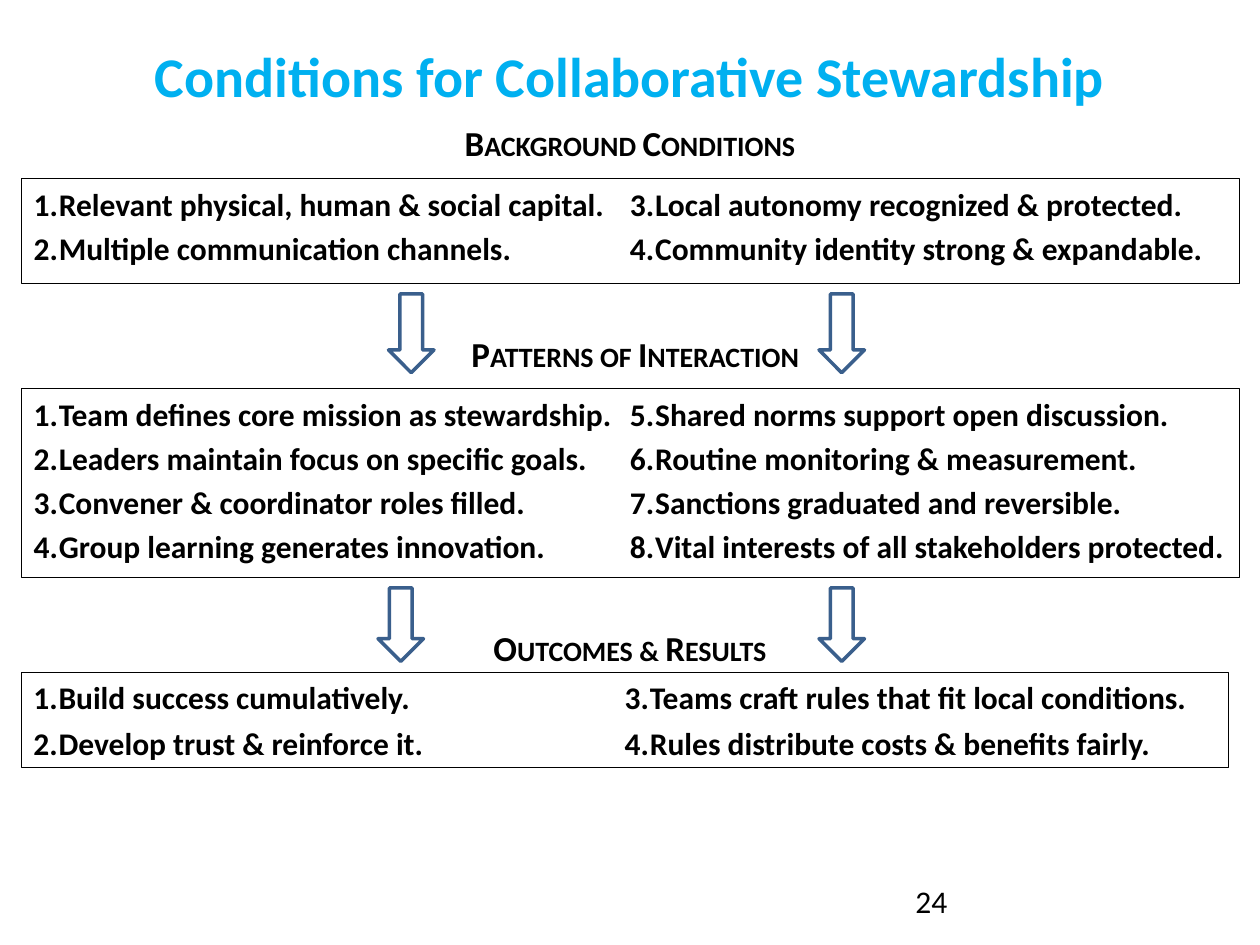
"""Build the slide on conditions for collaborative stewardship."""
import pptx
import pptx.util
import pptx.dml.color
import pptx.enum.shapes
import pptx.enum.text
import lxml.etree

Pt = pptx.util.Pt
Fit = pptx.enum.text.MSO_AUTO_SIZE
Anchor = pptx.enum.text.MSO_ANCHOR
Align = pptx.enum.text.PP_ALIGN
Shape = pptx.enum.shapes.MSO_SHAPE
A = "{http://schemas.openxmlformats.org/drawingml/2006/main}"
HUES = {"title": "00B0F0", "text": "000000", "arrow": "3A5F8C"}


def hue(name):
    return pptx.dml.color.RGBColor.from_string(HUES[name])


def write(para, text, size, bold=True, color="text"):
    run = para.add_run()
    run.text = text
    run.font.name = "Calibri"
    run.font.size = Pt(size)
    run.font.bold = bold
    run.font.color.rgb = hue(color)
    return run


deck = pptx.Presentation()
deck.slide_width, deck.slide_height = Pt(720), Pt(540)
slide = deck.slides.add_slide(deck.slide_layouts[3])
shapes = slide.shapes

title = shapes.title
title.left, title.top, title.width, title.height = Pt(36), Pt(18), Pt(648), Pt(48)
title.text_frame.auto_size = Fit.NONE
title.text_frame.vertical_anchor = Anchor.MIDDLE
para = title.text_frame.paragraphs[0]
para.alignment = Align.CENTER
para.line_spacing = Pt(40)
write(para, "Conditions for Collaborative Stewardship", 32, color="title")

last = shapes.add_textbox(Pt(12), Pt(384), Pt(690), Pt(54.7))
lists = [
    (slide.placeholders[1], 102, 696, 60, 3.6, Fit.NONE, [
        "Relevant physical, human & social capital.",
        "Multiple communication channels.",
        "Local autonomy recognized & protected.",
        "Community identity strong & expandable.",
    ]),
    (slide.placeholders[2], 222, 696, 108, 3.6, Fit.NONE, [
        "Team defines core mission as stewardship.",
        "Leaders maintain focus on specific goals.",
        "Convener & coordinator roles filled.",
        "Group learning generates innovation.",
        "Shared norms support open discussion.",
        "Routine monitoring & measurement.",
        "Sanctions graduated and reversible.",
        "Vital interests of all stakeholders protected.",
    ]),
    (last, 384, 690, 54.7, 4.3, Fit.SHAPE_TO_FIT_TEXT, [
        "Build success cumulatively.",
        "Develop trust & reinforce it.",
        "Teams craft rules that fit local conditions.",
        "Rules distribute costs & benefits fairly.",
    ]),
]
for box, top, width, height, gap, fit, items in lists:
    box.left, box.top, box.width, box.height = Pt(12), Pt(top), Pt(width), Pt(height)
    box.line.color.rgb = hue("text")
    box.line.width = Pt(0.25)
    frame = box.text_frame
    frame.word_wrap = True
    frame.auto_size = fit
    frame.vertical_anchor = Anchor.TOP
    frame._txBody.bodyPr.set("numCol", "2")
    for i, item in enumerate(items):
        para = frame.add_paragraph() if i else frame.paragraphs[0]
        props = para._p.get_or_add_pPr()
        props.set("marL", str(Pt(14.4)))
        props.set("indent", str(Pt(-14.4)))
        lxml.etree.SubElement(props, A + "buFont", typeface="+mj-lt")
        lxml.etree.SubElement(props, A + "buAutoNum", type="arabicPeriod")
        para.space_before = Pt(gap if i else 0)
        write(para, item, 18)

heads = [
    ("Background Conditions", 30, 66, 660),
    ("Patterns of Interaction", 240, 186.4, 246),
    ("Outcomes & Results", 246, 354.4, 228),
]
for text, left, top, width in heads:
    frame = shapes.add_textbox(Pt(left), Pt(top), Pt(width), Pt(31.5)).text_frame
    frame.word_wrap = True
    para = frame.paragraphs[0]
    para.alignment = Align.CENTER
    run = write(para, text, 20)
    run.font._element.set("cap", "small")

for left, top, height in [(222, 168, 45), (468, 168, 45), (216, 336, 42), (468, 336, 42)]:
    arrow = shapes.add_shape(Shape.DOWN_ARROW, Pt(left), Pt(top), Pt(26), Pt(height))
    arrow.shadow.inherit = False
    arrow.fill.background()
    arrow.line.color.rgb = hue("arrow")
    arrow.line.width = Pt(2)

page = shapes.add_textbox(Pt(516), Pt(500.4), Pt(168), Pt(28.8)).text_frame
page.word_wrap = True
write(page.paragraphs[0], "24", 18, bold=False)

deck.save("out.pptx")
